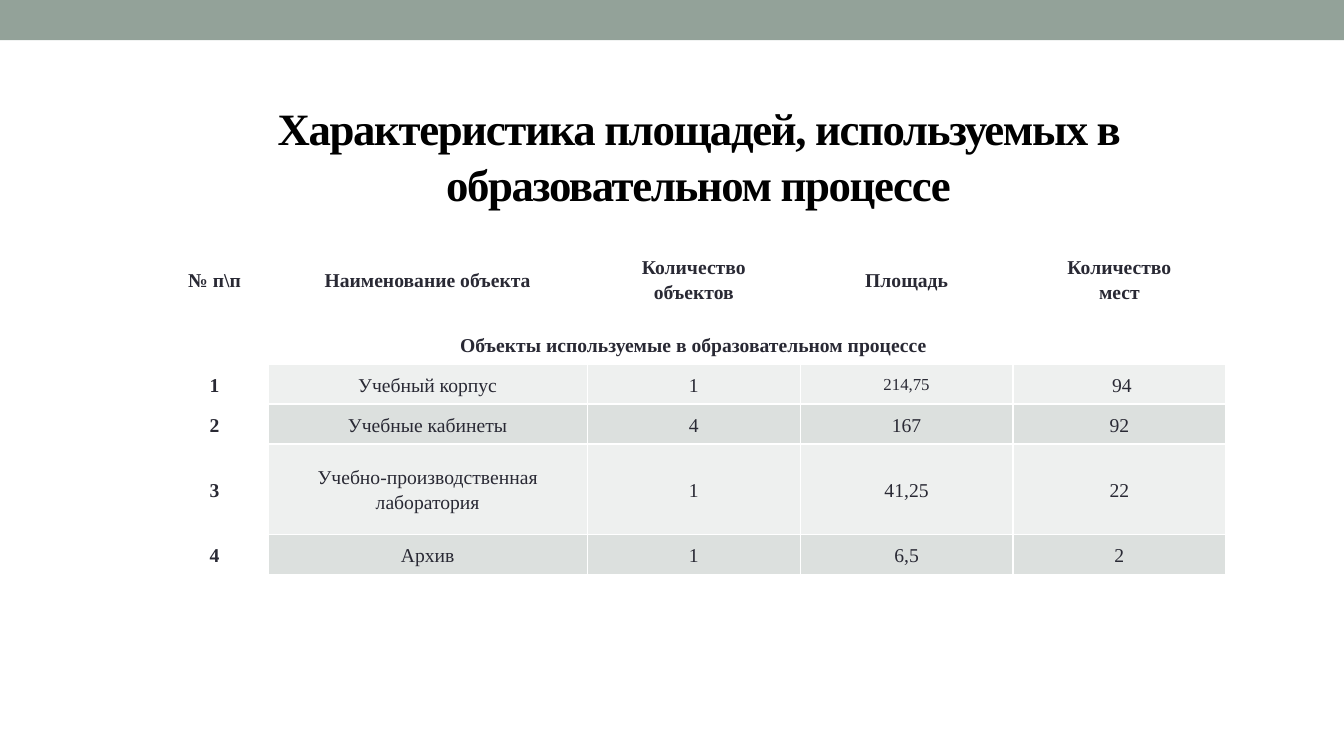
from copy import deepcopy
from dataclasses import dataclass

from lxml import etree
from pptx import Presentation
from pptx import util as u
from pptx.dml.color import RGBColor
from pptx.enum import shapes, text
from pptx.oxml import ns


@dataclass(frozen=True)
class Theme:
    face: str = "Times New Roman"
    band: str = "93A299"
    title: str = "000000"
    body: str = "292934"
    border: str = "FFFFFF"
    stripes: tuple = ("EEF0EF", "DCE0DE")
    title_size: float = 32
    body_size: float = 14
    small_size: float = 12


THEME = Theme()
TITLE = "Характеристика площадей, используемых в образовательном процессе"
SECTION = "Объекты используемые в образовательном процессе"
HEADERS = ["№ п\\п", "Наименование объекта", "Количество\vобъектов", "Площадь", "Количество\vмест"]
OBJECTS = [
    ["1", "Учебный корпус", "1", "214,75", "\u00a094"],
    ["2", "Учебные кабинеты", "4", "167", "92"],
    ["3", "Учебно-производственная лаборатория", "1", "41,25", "22"],
    ["4", "Архив", "1", "6,5", "2"],
]
SMALL_VALUE = "214,75"
COLUMN_WIDTHS = [76.2, 228.2, 152, 152, 152]
ROW_HEIGHTS = [64.4, 28.6, 28.6, 28.6, 64.6, 28.6]


def assign(target, values):
    for name, value in values.items():
        setattr(target, name, value)


def write(frame, words, size, color, bold, spacing):
    """Put one centred paragraph into a text frame."""
    para = frame.paragraphs[0]
    para.text = words
    assign(para, {"alignment": text.PP_ALIGN.CENTER, "line_spacing": spacing})
    for span in para.runs:
        assign(span.font, {"name": THEME.face, "size": u.Pt(size), "bold": bold})
        span.font.color.rgb = RGBColor.from_string(color)
    for line_break in para._p.findall(ns.qn("a:br")):
        line_break.append(deepcopy(para.runs[0]._r.get_or_add_rPr()))
    return para


def add_band(page, left, top, width, height):
    band = page.shapes.add_shape(shapes.MSO_SHAPE.RECTANGLE, *map(u.Pt, (left, top, width, height)))
    band.shadow.inherit = False
    band.fill.solid()
    band.fill.fore_color.rgb = RGBColor.from_string(THEME.band)
    band.line.fill.background()


def add_title(page, left, top, width, height):
    box = page.shapes.add_textbox(*map(u.Pt, (left, top, width, height)))
    assign(box.text_frame, {"word_wrap": True, "vertical_anchor": text.MSO_ANCHOR.MIDDLE})
    para = write(box.text_frame, TITLE, THEME.title_size, THEME.title, True, 1.05)
    for span in para.runs:
        span._r.get_or_add_rPr().set("spc", "-100")


def set_borders(cell, bottom):
    """Draw all four sides; they must come before the fill in the cell's XML."""
    properties = cell._tc.get_or_add_tcPr()
    for index, (side, width) in enumerate({"lnL": 1, "lnR": 1, "lnT": 1, "lnB": bottom}.items()):
        line = etree.Element(ns.qn(f"a:{side}"), w=str(u.Pt(width)))
        fill = etree.SubElement(line, ns.qn("a:solidFill"))
        etree.SubElement(fill, ns.qn("a:srgbClr"), val=THEME.border)
        properties.insert(index, line)


def add_areas_table(page, left, top):
    rows = [HEADERS, [SECTION] + [""] * 4] + OBJECTS
    table = page.shapes.add_table(
        len(rows), len(HEADERS), u.Pt(left), u.Pt(top),
        u.Pt(sum(COLUMN_WIDTHS)), u.Pt(sum(ROW_HEIGHTS))).table
    assign(table, {"first_row": False, "horz_banding": False})
    for column, width in zip(table.columns, COLUMN_WIDTHS):
        column.width = u.Pt(width)
    for row, height in zip(table.rows, ROW_HEIGHTS):
        row.height = u.Pt(height)
    table.cell(1, 0).merge(table.cell(1, len(HEADERS) - 1))

    for r, row in enumerate(rows):
        for c, words in enumerate(row):
            cell = table.cell(r, c)
            heading = r < 2 or c == 0
            assign(cell, {"margin_left": u.Pt(3), "margin_right": u.Pt(3), "margin_top": 0,
                          "margin_bottom": 0, "vertical_anchor": text.MSO_ANCHOR.MIDDLE})
            if heading:
                cell.fill.background()
            else:
                cell.fill.solid()
                cell.fill.fore_color.rgb = RGBColor.from_string(THEME.stripes[r % 2])
            set_borders(cell, 3 if r == 0 else 1)
            if words:
                size = THEME.small_size if words == SMALL_VALUE else THEME.body_size
                write(cell.text_frame, words, size, THEME.body, heading, 1.15)


def main():
    deck = Presentation()
    assign(deck, {"slide_width": u.Pt(960), "slide_height": u.Pt(540)})
    page = deck.slides.add_slide(deck.slide_layouts[6])
    add_band(page, 0, 0, 960, 28.8)
    add_title(page, 104.4, 80, 789, 60.5)
    add_areas_table(page, 115.2, 167)
    deck.save("out.pptx")


if __name__ == "__main__":
    main()
